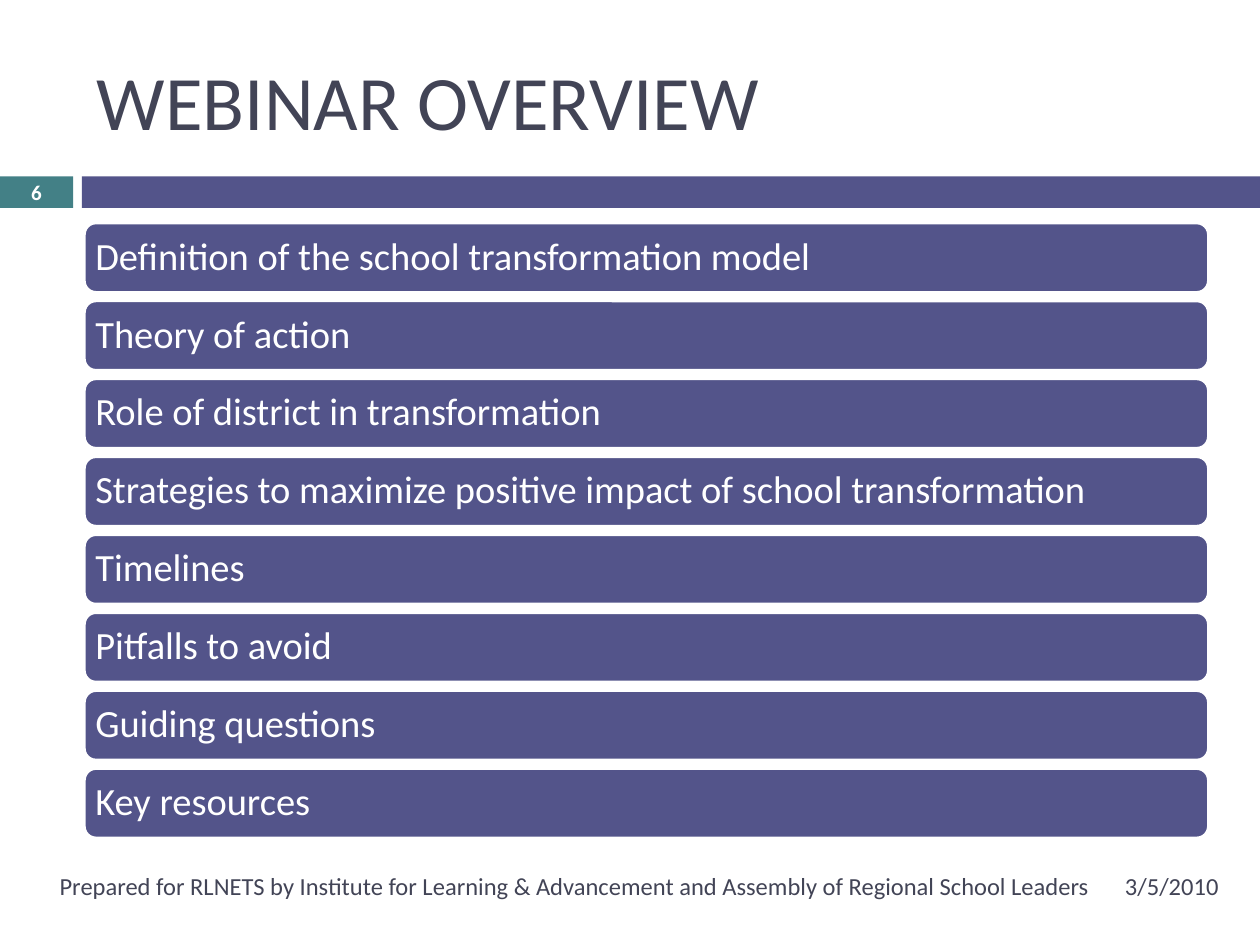
from pptx import Presentation
from pptx.dml.color import RGBColor
from pptx.enum.shapes import MSO_SHAPE
from pptx.enum.text import MSO_ANCHOR, PP_ALIGN
from pptx.util import Inches, Pt

INDIGO = RGBColor(0x53, 0x54, 0x8A)
TEAL = RGBColor(0x43, 0x80, 0x86)
SLATE = RGBColor(0x42, 0x44, 0x56)
WHITE = RGBColor(0xFF, 0xFF, 0xFF)

LEFT, WIDTH = 0.67, 8.92
FIRST_ROW, LAST_ROW, ROW_HEIGHT = 1.77, 6.10, 0.55
BAND_TOP, BAND_HEIGHT = 1.40, 0.25
FOOTER_TOP, FOOTER_HEIGHT = 6.83, 0.40

TOPICS = [
    "Definition of the school transformation model",
    "Theory of action",
    "Role of district in transformation",
    "Strategies to maximize positive impact of school transformation",
    "Timelines",
    "Pitfalls to avoid",
    "Guiding questions",
    "Key resources",
]

deck = Presentation()
deck.slide_width, deck.slide_height = Inches(10), Inches(7.5)
page = deck.slides.add_slide(deck.slide_layouts[6])


def add_block(kind, left, top, width, height, fill):
    block = page.shapes.add_shape(
        kind, Inches(left), Inches(top), Inches(width), Inches(height))
    block.shadow.inherit = False
    block.fill.solid()
    block.fill.fore_color.rgb = fill
    block.line.fill.background()
    return block


def write(box, text, size, color, align=PP_ALIGN.LEFT):
    """Fill a shape or text box with one vertically centred paragraph."""
    frame = box.text_frame
    frame.word_wrap = True
    frame.vertical_anchor = MSO_ANCHOR.MIDDLE
    frame.text = text
    para = frame.paragraphs[0]
    para.alignment = align
    font = para.runs[0].font
    font.name, font.size, font.color.rgb = "Calibri", Pt(size), color
    return para


# Band under the title, with the page number at its left end
number = add_block(MSO_SHAPE.RECTANGLE, 0, BAND_TOP, 0.58, BAND_HEIGHT, TEAL)
number.text_frame.margin_top = number.text_frame.margin_bottom = 0
para = write(number, "6", 12, WHITE, PP_ALIGN.CENTER)
para.runs[0].font.bold = True
add_block(MSO_SHAPE.RECTANGLE, 0.65, BAND_TOP, 9.35, BAND_HEIGHT, INDIGO)

# Title and footer
for left, top, width, height, text, size, align in [
    (LEFT, 0.25, WIDTH, 1.08, "WEBINAR OVERVIEW", 44, PP_ALIGN.LEFT),
    (8.83, FOOTER_TOP, 1.08, FOOTER_HEIGHT, "3/5/2010", 14, PP_ALIGN.LEFT),
    (0.33, FOOTER_TOP, 8.42, FOOTER_HEIGHT,
     "Prepared for RLNETS by Institute for Learning & Advancement "
     "and Assembly of Regional School Leaders", 14, PP_ALIGN.RIGHT),
]:
    box = page.shapes.add_textbox(
        Inches(left), Inches(top), Inches(width), Inches(height))
    write(box, text, size, SLATE, align)

# One rounded bar per topic, evenly spaced
pitch = (LAST_ROW - FIRST_ROW) / (len(TOPICS) - 1)
for row, topic in enumerate(TOPICS):
    bar = add_block(MSO_SHAPE.ROUNDED_RECTANGLE, LEFT,
                    FIRST_ROW + row * pitch, WIDTH, ROW_HEIGHT, INDIGO)
    bar.line.color.rgb = WHITE
    bar.line.width = Pt(1.5)
    frame = bar.text_frame
    frame.margin_left = frame.margin_right = Inches(0.06)
    frame.margin_top = frame.margin_bottom = Inches(0.06)
    para = write(bar, topic, 22, WHITE)
    para.line_spacing = 0.9

deck.save("out.pptx")
